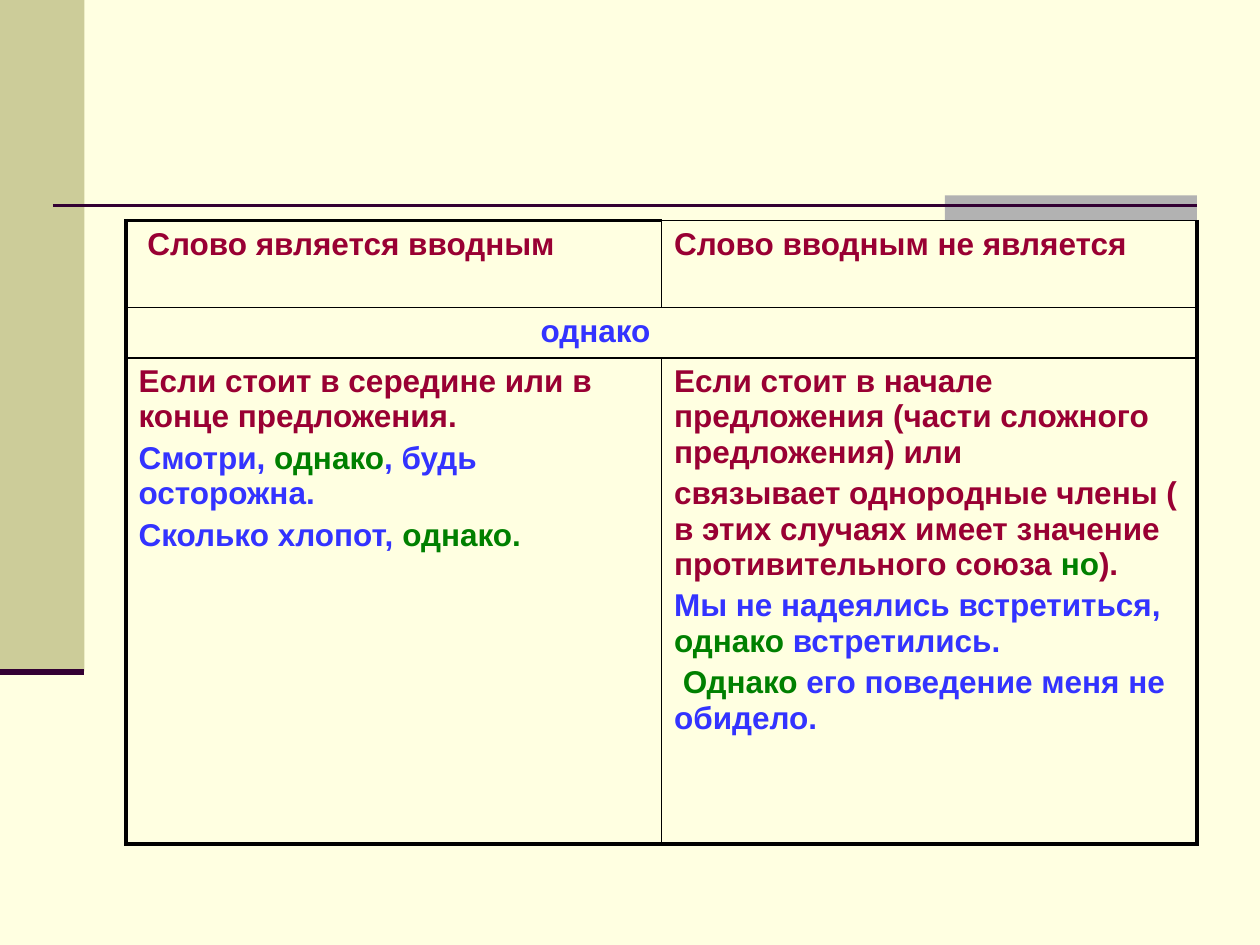
"""Build a slide with a table on when the word «однако» is parenthetical."""
from lxml.etree import SubElement
from pptx import Presentation
from pptx.dml.color import RGBColor
from pptx.enum.shapes import MSO_CONNECTOR as Line, MSO_SHAPE as Shape
from pptx.oxml.ns import qn
from pptx.util import Inches, Pt

CREAM = RGBColor(0xFF, 0xFF, 0xE1)
KHAKI = RGBColor(0xCC, 0xCC, 0x99)
GRAY = RGBColor(0xB2, 0xB2, 0xB2)
PLUM = RGBColor(0x33, 0x00, 0x33)
RED = RGBColor(0x99, 0x00, 0x33)
BLUE = RGBColor(0x33, 0x33, 0xFF)
GREEN = RGBColor(0x00, 0x80, 0x00)


def write(cell, paras):
    frame = cell.text_frame
    for i, runs in enumerate(paras):
        para = frame.add_paragraph() if i else frame.paragraphs[0]
        para.space_before = Pt(3.6)
        para.font.name = "Arial"
        para.font.size = Pt(18)
        para.font.bold = True
        for text, color in runs:
            run = para.add_run()
            run.text = text
            run.font.color.rgb = color


def border(cell, widths):
    props = cell._tc.get_or_add_tcPr()
    for side, width in zip("LRTB", widths):
        edge = SubElement(props, qn(f"a:ln{side}"), w=str(Pt(width)))
        fill = SubElement(edge, qn("a:solidFill"))
        SubElement(fill, qn("a:srgbClr"), val="000000")


prs = Presentation()
prs.slide_width, prs.slide_height = Inches(10), Inches(7.5)
slide = prs.slides.add_slide(prs.slide_layouts[6])
slide.background.fill.solid()
slide.background.fill.fore_color.rgb = CREAM

bars = [(0, 0, 0.67, 5.33, KHAKI), (7.5, 1.55, 2, 0.2, GRAY)]
for *box, color in bars:
    bar = slide.shapes.add_shape(Shape.RECTANGLE, *map(Inches, box))
    bar.shadow.inherit = False
    bar.fill.solid()
    bar.fill.fore_color.rgb = color
    bar.line.fill.background()

rules = [(0.42, 9.5, 1.63, 1.5), (0, 0.67, 5.33, 3.5)]
for left, right, y, width in rules:
    rule = slide.shapes.add_connector(
        Line.STRAIGHT, Inches(left), Inches(y), Inches(right), Inches(y))
    rule.line.color.rgb = PLUM
    rule.line.width = Pt(width)
    SubElement(rule._element.spPr, qn("a:effectLst"))

rows = [
    [
        [[(" Слово является вводным", RED)]],
        [[("Слово вводным не является", RED)]],
    ],
    [[[("однако", BLUE)]], []],
    [
        [
            [("Если стоит в середине или в конце предложения.", RED)],
            [("Смотри, ", BLUE), ("однако", GREEN), (", будь осторожна.", BLUE)],
            [("Сколько хлопот, ", BLUE), ("однако.", GREEN)],
        ],
        [
            [("Если стоит в начале предложения (части сложного предложения) или", RED)],
            [("связывает однородные члены ( в этих случаях имеет значение "
              "противительного союза ", RED), ("но", GREEN), (").", RED)],
            [("Мы не надеялись встретиться, ", BLUE), ("однако ", GREEN),
             ("встретились.", BLUE)],
            [(" ", BLUE), ("Однако", GREEN), (" его поведение меня не обидело.", BLUE)],
        ],
    ],
]
THICK, THIN = 2.25, 1
edges = [
    [(THICK, THIN, THICK, THIN), (THIN, THICK, THIN, THIN)],
    [(THICK, THICK, THIN, THIN), (THIN, THICK, THIN, THIN)],
    [(THICK, THIN, THIN, THICK), (THIN, THICK, THIN, THICK)],
]

table = slide.shapes.add_table(
    3, 2, Inches(1), Inches(1.75), Inches(8.5), Inches(4.95)).table
table.first_row = table.horz_banding = False
for row, height in zip(table.rows, (0.69, 0.4, 3.86)):
    row.height = Inches(height)
table.cell(1, 0).merge(table.cell(1, 1))
for r, row in enumerate(rows):
    for c, paras in enumerate(row):
        cell = table.cell(r, c)
        write(cell, paras)
        border(cell, edges[r][c])
        cell.fill.background()
table.cell(1, 0).margin_left = Inches(3.29)

prs.save("out.pptx")
